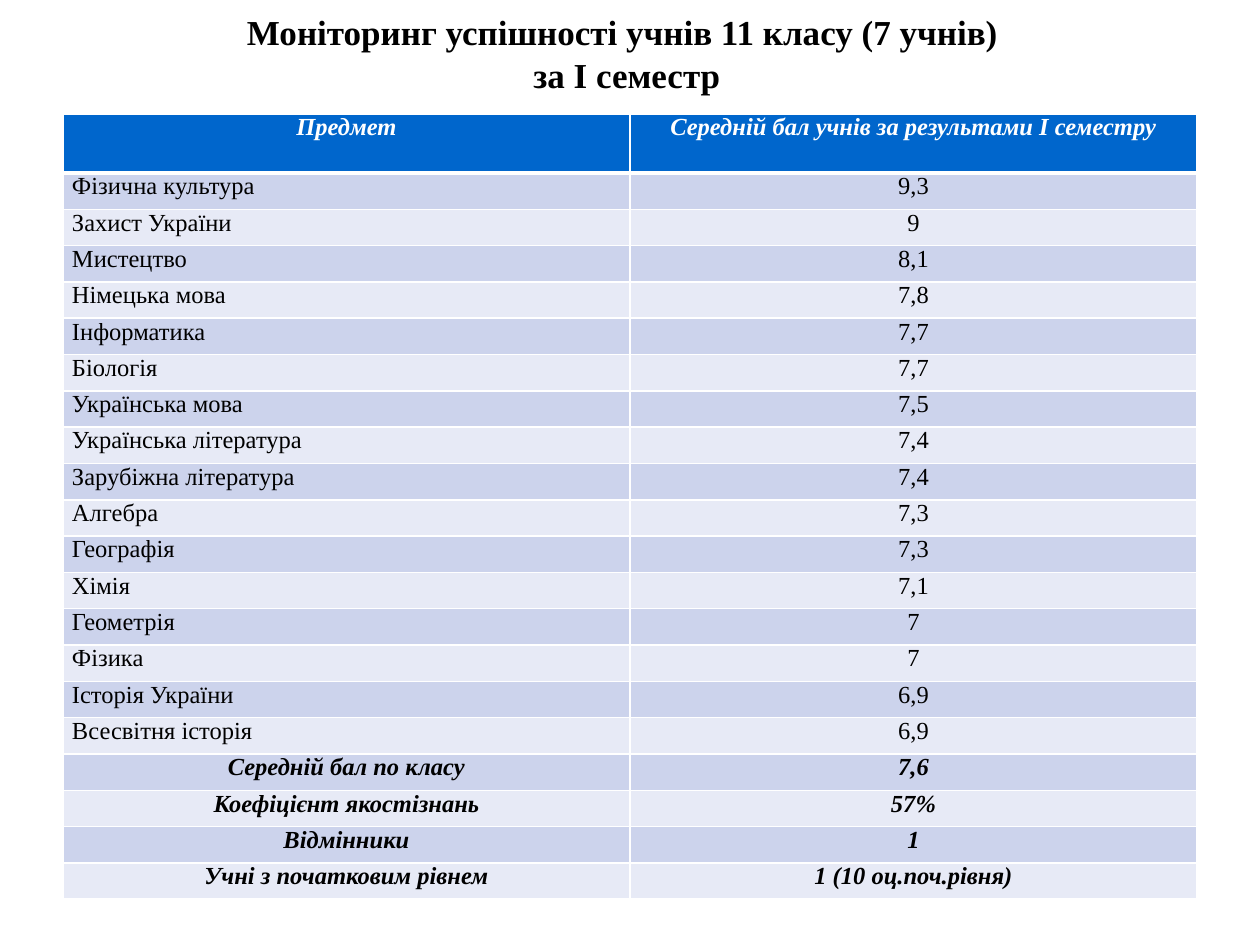
from lxml.etree import SubElement
from pptx import Presentation
from pptx.dml.color import RGBColor
from pptx.enum.text import MSO_ANCHOR as ANCHOR, MSO_AUTO_SIZE as AUTO, PP_ALIGN as ALIGN
from pptx.oxml.ns import qn
from pptx.util import Emu, Pt

SCALE = 914400 / 126
COLORS = {
    "text": "000000",
    "white": "FFFFFF",
    "header": "0066CC",
    "odd": "CCD3EC",
    "even": "E7EAF6",
}
FONT = "Times New Roman"
TITLE = "Моніторинг успішності учнів 11 класу (7 учнів)\v за І семестр"
HEADER = ("Предмет", "Середній бал учнів за результами І семестру")
SUBJECTS = [
    ("Фізична культура", "9,3"),
    ("Захист України", "9"),
    ("Мистецтво", "8,1"),
    ("Німецька мова", "7,8"),
    ("Інформатика", "7,7"),
    ("Біологія", "7,7"),
    ("Українська мова", "7,5"),
    ("Українська література", "7,4"),
    ("Зарубіжна література", "7,4"),
    ("Алгебра", "7,3"),
    ("Географія", "7,3"),
    ("Хімія", "7,1"),
    ("Геометрія", "7"),
    ("Фізика", "7"),
    ("Історія України", "6,9"),
    ("Всесвітня історія", "6,9"),
]
SUMMARY = [
    ("Середній бал по класу", "7,6"),
    ("Коефіцієнт якостізнань", "57%"),
    ("Відмінники", "1"),
    ("Учні з початковим рівнем", "1 (10 оц.поч.рівня)"),
]


def px(n):
    return Emu(round(n * SCALE))


def rgb(name):
    return RGBColor.from_string(COLORS[name])


def write(tf, text, size=14, color="text", bold=False, italic=False, align=ALIGN.CENTER):
    p = tf.paragraphs[0]
    p.text = text
    p.alignment = align
    for r in p.runs:
        r.font.name = FONT
        r.font.size = Pt(size)
        r.font.bold = bold
        r.font.italic = italic
        r.font.color.rgb = rgb(color)


def add_borders(cell, top=1, bottom=1):
    tcPr = cell._tc.get_or_add_tcPr()
    for side, width in (("L", 1), ("R", 1), ("T", top), ("B", bottom)):
        ln = SubElement(tcPr, qn(f"a:ln{side}"), w=str(Pt(width)))
        fill = SubElement(ln, qn("a:solidFill"))
        SubElement(fill, qn("a:srgbClr"), val=COLORS["white"])


def style_cell(cell, fill, **borders):
    cell.margin_left = cell.margin_right = px(9)
    cell.margin_top = cell.margin_bottom = 0
    cell.vertical_anchor = ANCHOR.TOP
    add_borders(cell, **borders)
    cell.fill.solid()
    cell.fill.fore_color.rgb = rgb(fill)


def place_title(s, x, y, w, h):
    sp = s.shapes.title
    sp.left, sp.top, sp.width, sp.height = px(x), px(y), px(w), px(h)
    tf = sp.text_frame
    tf.word_wrap = True
    tf.auto_size = AUTO.NONE
    tf.vertical_anchor = ANCHOR.MIDDLE
    write(tf, TITLE, size=20, bold=True)


def place_scores(s, x, y, w, h, header_h):
    rows = [HEADER, *SUBJECTS, *SUMMARY]
    table = s.shapes.add_table(len(rows), len(HEADER), px(x), px(y), px(w), px(h)).table
    for col in table.columns:
        col.width = px(w / len(HEADER))
    row_h = (h - header_h) / (len(rows) - 1)
    for i, values in enumerate(rows):
        header = i == 0
        strong = header or i > len(SUBJECTS)
        fill = "header" if header else "odd" if i % 2 else "even"
        table.rows[i].height = px(header_h if header else row_h)
        for j, value in enumerate(values):
            cell = table.cell(i, j)
            style_cell(cell, fill, top=3 if i == 1 else 1, bottom=3 if header else 1)
            write(cell.text_frame, value, color="white" if header else "text",
                  bold=strong, italic=strong,
                  align=ALIGN.CENTER if strong or j else ALIGN.LEFT)


def main():
    prs = Presentation()
    prs.slide_width, prs.slide_height = px(1260), px(945)
    s = prs.slides.add_slide(prs.slide_layouts[5])
    place_title(s, 0, 0, 1245, 106)
    place_scores(s, 63, 114, 1134, 786, header_h=59)
    prs.save("out.pptx")


if __name__ == "__main__":
    main()
